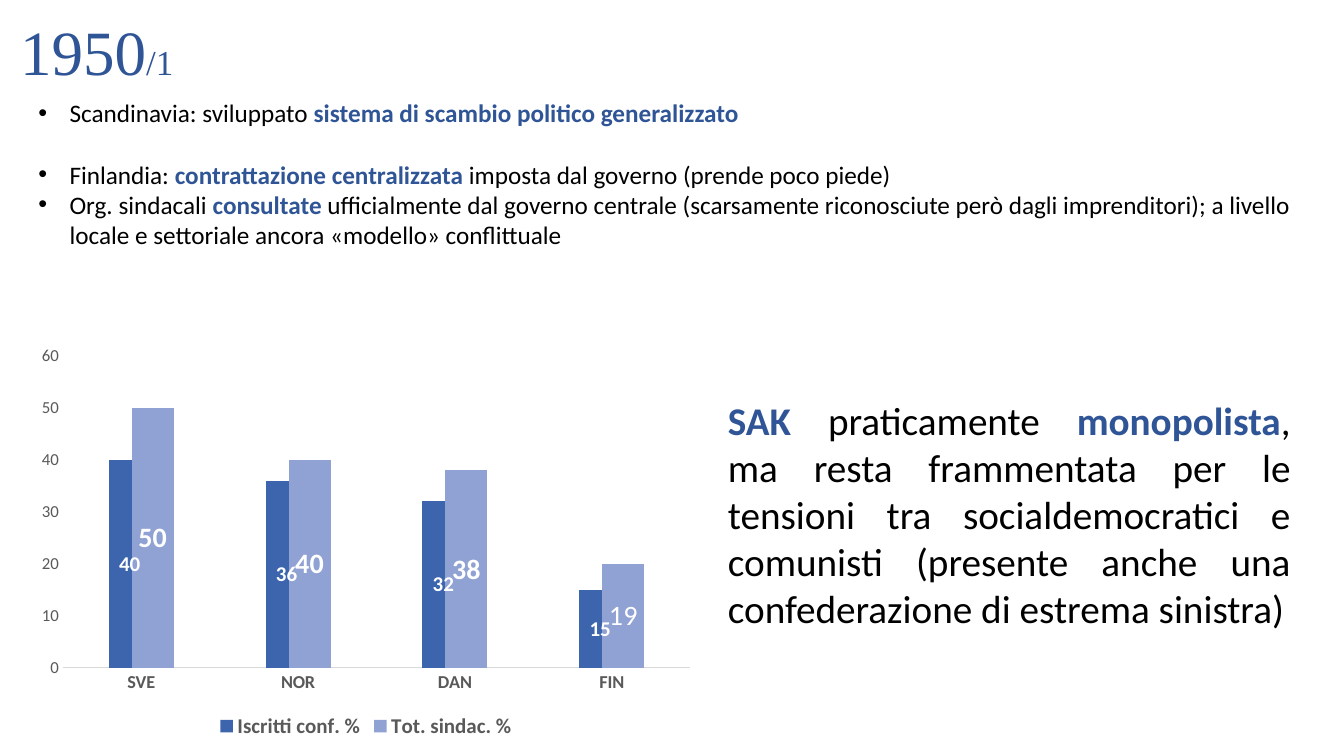
"""Build the 1950/1 slide on Nordic unions with its bar chart."""
from dataclasses import dataclass

from pptx import Presentation
from pptx.chart.data import CategoryChartData
from pptx.dml.color import RGBColor
from pptx.enum.chart import (XL_CHART_TYPE, XL_LABEL_POSITION,
                             XL_LEGEND_POSITION, XL_TICK_MARK)
from pptx.enum.text import MSO_ANCHOR, MSO_AUTO_SIZE, PP_ALIGN
from pptx.oxml.xmlchemy import OxmlElement
from pptx.util import Inches, Pt

BARS = XL_CHART_TYPE.COLUMN_CLUSTERED
MID = XL_LABEL_POSITION.CENTER
BOTTOM = XL_LEGEND_POSITION.BOTTOM
NO_TICK = XL_TICK_MARK.NONE
TOP = MSO_ANCHOR.TOP
NO_FIT = MSO_AUTO_SIZE.NONE
LEFT, FULL = PP_ALIGN.LEFT, PP_ALIGN.JUSTIFY

WIDE, HIGH = Inches(13.33), Inches(7.5)
COL, ROW = WIDE / 100, HIGH / 100
SANS, SERIF = "Calibri", "Times New Roman"
HUES = {"ink": "000000", "blue": "2F5597", "grey": "595959", "rule": "D9D9D9",
        "white": "FFFFFF", "dark": "3C65AE", "light": "90A2D3"}


@dataclass
class Area:
    """A place in columns and rows of a 100 by 100 grid."""
    col: float
    row: float
    cols: float
    rows: float

    def box(self) -> tuple[int, int, int, int]:
        """Give left, top, width and height in slide units."""
        return (round(self.col * COL), round(self.row * ROW),
                round(self.cols * COL), round(self.rows * ROW))


@dataclass
class Style:
    """The look of a piece of text."""
    size: float
    hue: str = "ink"
    bold: bool = False
    face: str = SANS


@dataclass
class Para:
    """A paragraph made of text and style pairs."""
    runs: list[tuple[str, Style]]
    align: PP_ALIGN = FULL
    bullet: bool = False
    after: float = 0


@dataclass
class Block:
    """A placeholder with its place and its text."""
    slot: int
    area: Area
    paras: list[Para]


@dataclass
class Bar:
    """A chart series with its fill and label style."""
    name: str
    vals: list[int]
    hue: str
    label: Style


PLAIN, STRONG = Style(18), Style(18, "blue", True)
BIG, LOUD = Style(28), Style(28, "blue", True)
BLOCKS = [
    Block(0, Area(0.75, 0.93, 21.9, 11.47), [
        Para([("1950", Style(45, "blue", face=SERIF)),
              ("/1", Style(25, "blue", face=SERIF))], LEFT)]),
    Block(1, Area(2.1, 12.27, 94.67, 21.6), [
        Para([("Scandinavia: sviluppato ", PLAIN),
              ("sistema di scambio politico generalizzato", STRONG)],
             bullet=True, after=22),
        Para([("Finlandia: ", PLAIN), ("contrattazione centralizzata ", STRONG),
              ("imposta dal governo (prende poco piede)", PLAIN)], bullet=True),
        Para([("Org. sindacali ", PLAIN), ("consultate", STRONG),
              (" ufficialmente dal governo centrale (scarsamente riconosciute però "
               "dagli imprenditori); a livello locale e settoriale ancora «modello» "
               "conflittuale", PLAIN)], bullet=True)]),
    Block(2, Area(53.41, 51.73, 43.36, 32.8), [
        Para([("SAK ", LOUD), ("praticamente", BIG), (" monopolista", LOUD),
              (", ma resta frammentata per le tensioni tra socialdemocratici e "
               "comunisti (presente anche una confederazione di estrema sinistra)",
               BIG)])]),
]
GRAPH = Area(2.1, 44.67, 50.26, 53.6)
LANDS = ["SVE", "NOR", "DAN", "FIN"]
SERIES = [
    Bar("Iscritti conf. %", [40, 36, 32, 15], "dark", Style(15, "white", True)),
    Bar("Tot. sindac. %", [50, 40, 38, 20], "light", Style(20, "white", True)),
]


def tint(hue: str) -> RGBColor:
    """Turn a colour name into a colour."""
    return RGBColor.from_string(HUES[hue])


def dress(font, style: Style) -> None:
    """Apply a style to a font."""
    font.size, font.bold, font.name = Pt(style.size), style.bold, style.face
    font.color.rgb = tint(style.hue)


def indent(line, bullet: bool) -> None:
    """Set the bullet and hanging indent of a paragraph."""
    props = line._p.get_or_add_pPr()
    hang = Inches(0.31) if bullet else 0
    props.set("marL", str(hang))
    props.set("indent", str(-hang))
    mark = OxmlElement("a:buChar" if bullet else "a:buNone")
    if bullet:
        mark.set("char", "•")
    props.append(mark)


def write(slide, block: Block) -> None:
    """Fill one placeholder."""
    shape = slide.placeholders[block.slot]
    shape.left, shape.top, shape.width, shape.height = block.area.box()
    frame = shape.text_frame
    frame.word_wrap, frame.auto_size = True, NO_FIT
    frame.vertical_anchor = TOP
    for i, para in enumerate(block.paras):
        line = frame.add_paragraph() if i else frame.paragraphs[0]
        line.alignment, line.line_spacing = para.align, 1.0
        line.space_before, line.space_after = Pt(0), Pt(para.after)
        indent(line, para.bullet)
        for text, style in para.runs:
            run = line.add_run()
            run.text = text
            dress(run.font, style)


def plot(slide) -> None:
    """Draw the bar chart."""
    data = CategoryChartData()
    data.categories = LANDS
    for bar in SERIES:
        data.add_series(bar.name, bar.vals)
    chart = slide.shapes.add_chart(BARS, *GRAPH.box(), data).chart
    dress(chart.font, Style(10))
    chart.has_title, chart.has_legend = False, True
    chart.legend.position, chart.legend.include_in_layout = BOTTOM, False
    dress(chart.legend.font, Style(15, "grey", True))

    lands, scale = chart.category_axis, chart.value_axis
    for axis, style in ((lands, Style(13, "grey", True)), (scale, Style(12, "grey"))):
        axis.major_tick_mark = axis.minor_tick_mark = NO_TICK
        axis.has_major_gridlines = False
        dress(axis.tick_labels.font, style)
    lands.format.line.color.rgb = tint("rule")
    lands.format.line.width = Pt(0.75)
    scale.format.line.fill.background()
    scale.minimum_scale, scale.maximum_scale, scale.major_unit = 0, 60, 10

    group = chart.plots[0]
    group.gap_width, group.overlap, group.vary_by_categories = 219, 45, False
    for bar, drawn in zip(SERIES, group.series):
        drawn.format.fill.solid()
        drawn.format.fill.fore_color.rgb = tint(bar.hue)
        labels = drawn.data_labels
        labels.show_value, labels.position = True, MID
        dress(labels.font, bar.label)
    last = group.series[1].points[3].data_label
    run = last.text_frame.paragraphs[0].add_run()
    run.text = "19"
    dress(run.font, Style(20, "white"))
    last.position = MID


def main() -> None:
    """Build and save the deck."""
    deck = Presentation()
    deck.slide_width, deck.slide_height = WIDE, HIGH
    slide = deck.slides.add_slide(deck.slide_layouts[3])
    for block in BLOCKS:
        write(slide, block)
    plot(slide)
    deck.save("out.pptx")


if __name__ == "__main__":
    main()
